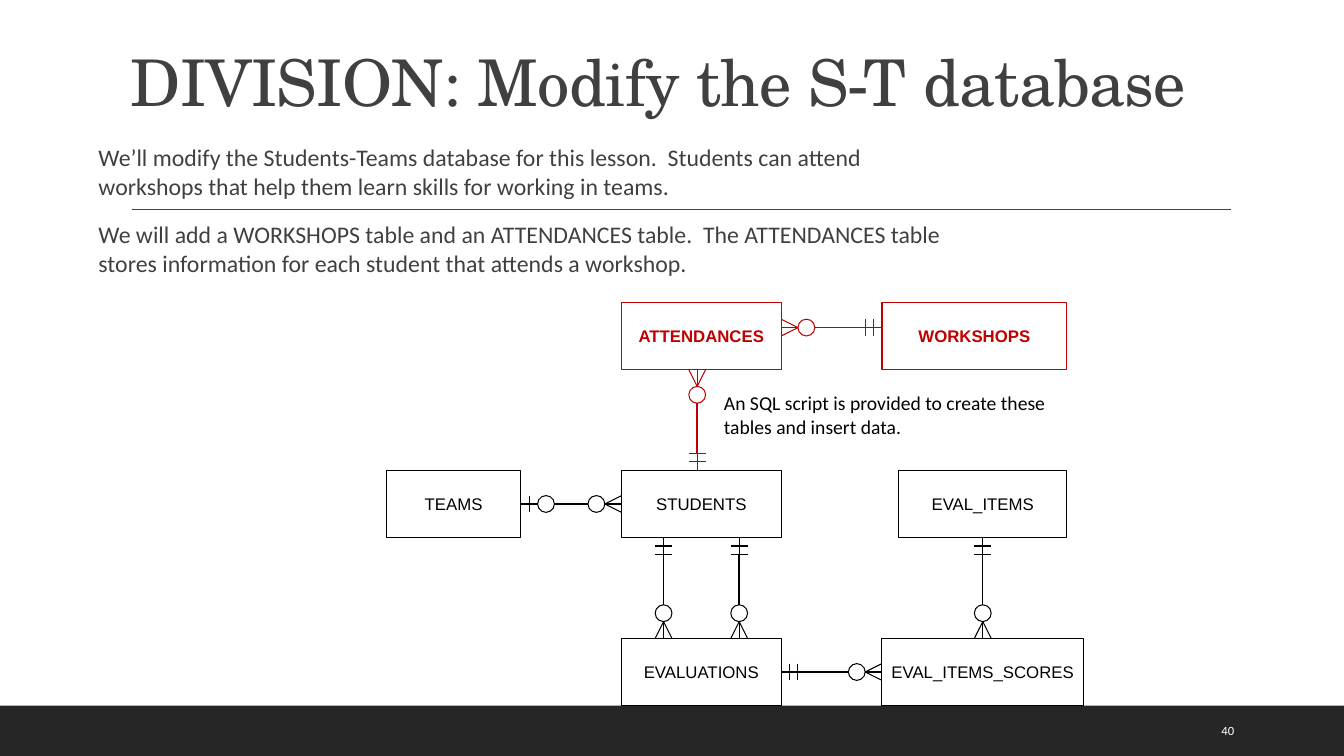
from lxml import etree
from pptx import Presentation
from pptx.dml.color import RGBColor
from pptx.enum import shapes, text
from pptx.oxml import ns
from pptx.util import Pt

COLORS = {"ink": "404040", "black": "000000", "red": "C00000",
          "footer": "262626", "white": "FFFFFF"}


def add_text(left, top, width, height, lines, font, size, color):
    box = page.shapes.add_textbox(Pt(left), Pt(top), Pt(width), Pt(height))
    frame = box.text_frame
    frame.word_wrap = True
    frame.text = "\n".join(lines)
    for para in frame.paragraphs:
        para.font.name = font
        para.font.size = Pt(size)
        para.font.color.rgb = RGBColor.from_string(COLORS[color])
        for span in para.runs:
            span.font.name = font
            span.font.size = Pt(size)
            span.font.color.rgb = RGBColor.from_string(COLORS[color])
    return frame


def add_line(start, end, color, width=0.75):
    line = page.shapes.add_connector(
        shapes.MSO_CONNECTOR.STRAIGHT, *[Pt(value) for value in (*start, *end)])
    line.line.color.rgb = RGBColor.from_string(COLORS[color])
    line.line.width = Pt(width)
    etree.SubElement(line._element.spPr, ns.qn("a:effectLst"))


deck = Presentation()
deck.slide_width, deck.slide_height = Pt(960), Pt(540)
page = deck.slides.add_slide(deck.slide_layouts[6])

# Footer band, rule and texts
footer = page.shapes.add_shape(
    shapes.MSO_SHAPE.RECTANGLE, Pt(0), Pt(504), Pt(960), Pt(36))
footer.shadow.inherit = False
footer.fill.solid()
footer.fill.fore_color.rgb = RGBColor.from_string(COLORS["footer"])
footer.line.fill.background()
add_line((94.4, 149.5), (879, 149.5), "ink", 1)

title = add_text(86.4, 22.3, 792, 67, ["DIVISION: Modify the S-T database"],
                 "TeX Gyre Schola", 46, "ink")
title.vertical_anchor = text.MSO_ANCHOR.BOTTOM
title.paragraphs[0].line_spacing = 0.9
title.paragraphs[0].runs[0].font._element.set("spc", "-50")

body = add_text(63.2, 98.6, 630, 120, [
    "We’ll modify the Students-Teams database for this lesson.  Students can "
    "attend workshops that help them learn skills for working in teams.",
    "We will add a WORKSHOPS table and an ATTENDANCES table.  The ATTENDANCES "
    "table stores information for each student that attends a workshop.",
], "Calibri", 17, "ink")
body.margin_right = 0
for para in body.paragraphs:
    para.space_before, para.space_after = Pt(12), Pt(2)

add_text(510, 276, 270, 41,
         ["An SQL script is provided to create these tables and insert data."],
         "Calibri", 14, "black")
number = add_text(865.4, 507.6, 61, 28.8, ["40"], "Calibri", 9, "white")
number.vertical_anchor = text.MSO_ANCHOR.MIDDLE

# Entities: name, left, top, width, color
entities = [
    ("TEAMS", 276, 336, 96, "black"),
    ("STUDENTS", 444, 336, 114, "black"),
    ("EVAL_ITEMS", 642, 336, 120, "black"),
    ("EVALUATIONS", 444, 456, 114, "black"),
    ("EVAL_ITEMS_SCORES", 630, 456, 144, "black"),
    ("ATTENDANCES", 444, 216, 114, "red"),
    ("WORKSHOPS", 630, 216, 132, "red"),
]
for name, left, top, width, color in entities:
    box = page.shapes.add_shape(
        shapes.MSO_SHAPE.RECTANGLE, Pt(left), Pt(top), Pt(width), Pt(48))
    box.shadow.inherit = False
    box.fill.background()
    box.line.color.rgb = RGBColor.from_string(COLORS[color])
    box.line.width = Pt(0.75)
    frame = box.text_frame
    frame.word_wrap = False
    frame.vertical_anchor = text.MSO_ANCHOR.MIDDLE
    frame.text = name
    frame.paragraphs[0].alignment = text.PP_ALIGN.CENTER
    font = frame.paragraphs[0].runs[0].font
    font.name, font.size, font.bold = "Arial", Pt(12), color == "red"
    font.color.rgb = RGBColor.from_string(COLORS[color])

# Relationships run from the "one" end to the "many" end, each 72 pt long:
# start x, start y, direction x, direction y, whether "one" is optional, color
LENGTH, MARK = 72, 6
relationships = [
    (372, 360, 1, 0, True, "black"),
    (474, 384, 0, 1, False, "black"),
    (528, 384, 0, 1, False, "black"),
    (702, 384, 0, 1, False, "black"),
    (558, 480, 1, 0, False, "black"),
    (498, 336, 0, -1, False, "red"),
    (630, 234, -1, 0, False, "red"),
]
for x, y, dx, dy, optional, color in relationships:
    def place(along, across=0):
        """Point at a distance along the relationship and to its side."""
        return x + along * dx - across * dy, y + along * dy + across * dx

    bars = [MARK] if optional else [MARK, 2 * MARK]
    circles = [LENGTH - 3 * MARK] + ([3 * MARK] if optional else [])
    line_start = 4 * MARK if optional else 2 * MARK

    add_line(place(0), place(2 * MARK), color)
    add_line(place(line_start), place(LENGTH - 4 * MARK), color, 1)
    for bar in bars:
        add_line(place(bar, -MARK), place(bar, MARK), color)
    for toe in (-MARK, 0, MARK):
        add_line(place(LENGTH - 2 * MARK), place(LENGTH, toe), color)
    for center in circles:
        center_x, center_y = place(center)
        circle = page.shapes.add_shape(
            shapes.MSO_SHAPE.OVAL, Pt(center_x - MARK), Pt(center_y - MARK),
            Pt(2 * MARK), Pt(2 * MARK))
        circle.shadow.inherit = False
        circle.fill.background()
        circle.line.color.rgb = RGBColor.from_string(COLORS[color])
        circle.line.width = Pt(0.75)

deck.save("out.pptx")
